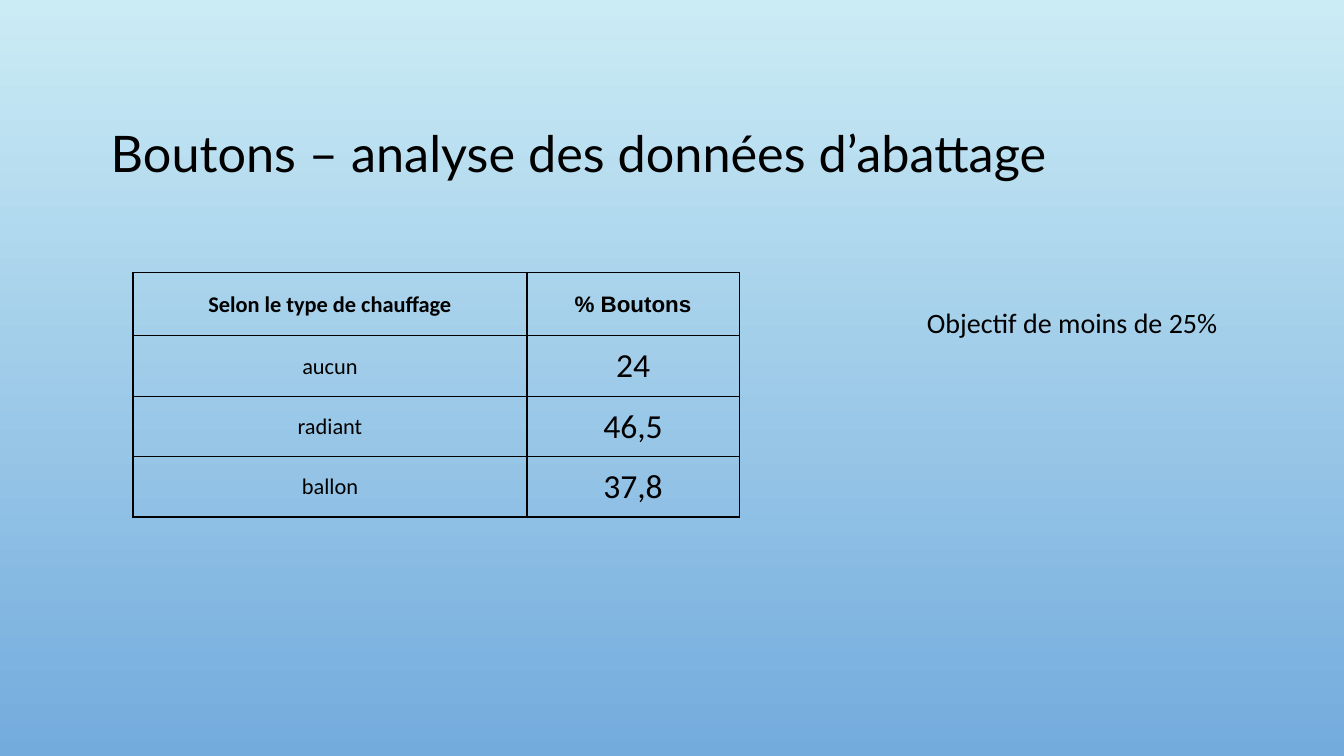
from lxml import etree
from pptx import Presentation
from pptx.dml.color import RGBColor
from pptx.enum.text import MSO_ANCHOR, PP_ALIGN
from pptx.oxml.ns import qn
from pptx.util import Pt

TOP, MIDDLE = MSO_ANCHOR.TOP, MSO_ANCHOR.MIDDLE
LEFT, CENTER = PP_ALIGN.LEFT, PP_ALIGN.CENTER
BLANK_LAYOUT = 6
COLORS = {"sky": "CBECF5", "blue": "73ABDD", "black": "000000"}
HEADERS = [("Selon le type de chauffage", "Calibri"), ("% Boutons", "Arial")]
HEATING_RATES = [("aucun", "24"), ("radiant", "46,5"), ("ballon", "37,8")]


def color(name):
    """Return the named colour."""
    return RGBColor.from_string(COLORS[name])


def add_run(paragraph, text, font_name, size, bold=False):
    """Add one black run to a paragraph."""
    run = paragraph.add_run()
    run.text = text
    run.font.name = font_name
    run.font.size = Pt(size)
    run.font.bold = bold
    run.font.color.rgb = color("black")


def paint_background(slide):
    """Fill the slide with a vertical gradient."""
    fill = slide.background.fill
    fill.gradient()
    fill.gradient_angle = 270
    for stop, position, name in zip(fill.gradient_stops, (0, 1), ("sky", "blue")):
        stop.position = position
        stop.color.rgb = color(name)


def add_text(slide, box, text, font_name, size, top_inset=3.6, line_spacing=1.0):
    """Place a line of text at the top of the given box."""
    shape = slide.shapes.add_textbox(*map(Pt, box))
    frame = shape.text_frame
    frame.word_wrap = True
    frame.vertical_anchor = TOP
    frame.margin_top = Pt(top_inset)
    paragraph = frame.paragraphs[0]
    paragraph.alignment = LEFT
    paragraph.line_spacing = line_spacing
    add_run(paragraph, text, font_name, size)


def format_cell(cell, text, font_name, size, bold):
    """Write a centred cell with thin borders and no fill."""
    properties = cell._tc.get_or_add_tcPr()
    for side in ("a:lnL", "a:lnR", "a:lnT", "a:lnB"):
        line = etree.SubElement(properties, qn(side), w=str(Pt(1)))
        solid = etree.SubElement(line, qn("a:solidFill"))
        etree.SubElement(solid, qn("a:srgbClr"), val=COLORS["black"])
    cell.fill.background()
    cell.vertical_anchor = MIDDLE
    cell.margin_left = cell.margin_right = cell.margin_top = Pt(0.75)
    cell.margin_bottom = Pt(0)
    paragraph = cell.text_frame.paragraphs[0]
    paragraph.alignment = CENTER
    add_run(paragraph, text, font_name, size, bold)


def add_heating_table(slide, box):
    """Place the table of rates by heating type in the given box."""
    left, top, width, height = box
    row_count = len(HEATING_RATES) + 1
    frame = slide.shapes.add_table(row_count, len(HEADERS), *map(Pt, box))
    table = frame.table
    table.first_row = table.horz_banding = False
    label_width, header_height = width * 0.65, 45
    table.columns[0].width = Pt(label_width)
    table.columns[1].width = Pt(width - label_width)
    table.rows[0].height = Pt(header_height)
    for column, (text, font_name) in enumerate(HEADERS):
        format_cell(table.cell(0, column), text, font_name, 16, True)
    for row, rates in enumerate(HEATING_RATES, 1):
        table.rows[row].height = Pt((height - header_height) / len(HEATING_RATES))
        for column, (text, size) in enumerate(zip(rates, (16, 24))):
            format_cell(table.cell(row, column), text, "Calibri", size, False)


def main():
    """Build and save the slide."""
    presentation = Presentation()
    presentation.slide_width, presentation.slide_height = Pt(960), Pt(540)
    slide = presentation.slides.add_slide(presentation.slide_layouts[BLANK_LAYOUT])
    paint_background(slide)
    add_text(slide, (72, 84, 816, 94), "Boutons – analyse des données d’abattage",
             "Lato", 36, top_inset=8.3, line_spacing=0.9)
    add_text(slide, (655, 214.5, 252, 31.5), "Objectif de moins de 25%", "Calibri", 20)
    add_heating_table(slide, (95, 194.75, 433, 174.6))
    presentation.save("out.pptx")


if __name__ == "__main__":
    main()
